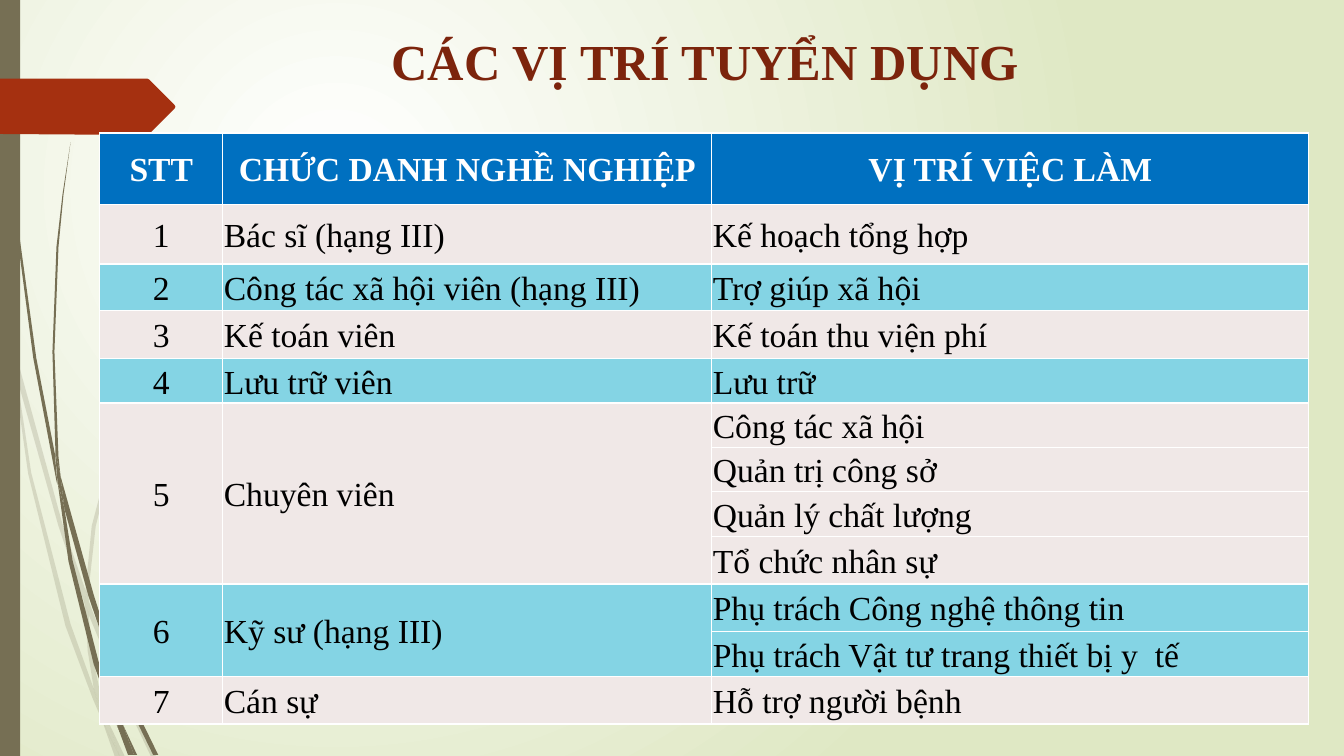
from lxml.etree import SubElement
from pptx import Presentation
from pptx.dml.color import RGBColor
from pptx.enum.shapes import MSO_SHAPE
from pptx.enum.text import MSO_ANCHOR, PP_ALIGN
from pptx.oxml import parse_xml
from pptx.oxml.ns import nsdecls, qn
from pptx.util import Inches, Pt

FONT = "Times New Roman"
WHITE = RGBColor(0xFF, 0xFF, 0xFF)
BLACK = RGBColor(0x00, 0x00, 0x00)
PALE_GREEN = RGBColor(0xDF, 0xE8, 0xC4)
OLIVE = RGBColor(0x76, 0x6F, 0x54)
RUST = RGBColor(0xA5, 0x30, 0x10)
TITLE_RED = RGBColor(0x7C, 0x24, 0x0C)
HEADER_BLUE = RGBColor(0x00, 0x70, 0xC0)
BANDS = [RGBColor(0xF0, 0xE8, 0xE7), RGBColor(0x84, 0xD4, 0xE4)]

# Outlines of the grass blades, in inches from the corner of their region
PALE_BLADES = [
    [(0.11, 3.5), (0.09, 3.22), (0, 2.82), (0, 2.99), (0.1, 3.44)],
    [(0.58, 5.22), (0.84, 5.99), (0.85, 5.86), (0.62, 5.2), (0.14, 3.45), (0.17, 3.76)],
    [(0.92, 6.07), (0.88, 5.96), (0.88, 6.1), (1.23, 6.94), (1.5, 7.51), (1.55, 7.51),
     (1.27, 6.92)],
    [(1.19, 7.51), (1.24, 7.51), (1.05, 7.11)],
    [(0.93, 6.83), (0.7, 6.19), (0.31, 4.69), (0.17, 3.76), (0.11, 3.5), (0.28, 4.7),
     (0.65, 6.21), (0.92, 6.93), (1.01, 7.14), (0.99, 7.07)],
    [(0.84, 5.99), (0.87, 6.46), (0.93, 6.83), (0.96, 6.92), (1.05, 7.11), (1.03, 7.06),
     (0.91, 6.46), (0.88, 6.1), (0.88, 6.08)],
    [(0.88, 5.84), (0.95, 5.22), (1.1, 4.62), (1.32, 4.05), (1.6, 3.49), (1.92, 2.95),
     (2.29, 2.45), (2.68, 1.98), (2.9, 1.75), (3.12, 1.54), (3.12, 1.53), (2.89, 1.75),
     (2.68, 1.97), (2.28, 2.44), (1.9, 2.95), (1.58, 3.48), (1.29, 4.03), (1.07, 4.61),
     (0.91, 5.22), (0.85, 5.84), (0.85, 5.86), (0.88, 5.96)],
    [(1.01, 7.14), (1.14, 7.51), (1.19, 7.51)],
    [(0.88, 6.08), (0.88, 6.1), (0.88, 5.96), (0.85, 5.86), (0.84, 5.99)],
    [(0.96, 6.92), (0.93, 6.83), (0.99, 7.07), (1.01, 7.14), (1.19, 7.51), (1.05, 7.11)],
]
DARK_BLADES = [
    [(0.07, 1.1), (0.17, 2.33), (0.33, 3.55), (0.56, 4.77), (0.57, 4.81), (0.55, 4.57),
     (0.55, 4.53), (0.36, 3.55), (0.19, 2.32), (0.08, 1.09), (0.05, 0.48), (0.04, 0),
     (0.03, 0), (0.04, 0.48)],
    [(0.88, 5.92), (1.06, 6.45), (1.06, 6.33), (1.06, 6.31), (0.93, 5.9), (0.6, 4.72),
     (0.64, 5.05)],
    [(1.13, 6.49), (1.1, 6.41), (1.11, 6.56), (1.32, 7.08), (1.52, 7.49), (1.57, 7.49),
     (1.36, 7.06)],
    [(1.1, 6.91), (0.98, 6.57), (0.72, 5.56), (0.64, 5.05), (0.57, 4.77), (0.68, 5.57),
     (0.93, 6.59), (1.11, 7.08), (1.17, 7.22), (1.16, 7.17)],
    [(0.6, 4.72), (0.58, 4.53), (0.54, 3.49), (0.58, 2.45), (0.63, 1.93), (0.7, 1.41),
     (0.62, 1.93), (0.56, 2.45), (0.52, 3.49), (0.55, 4.49)],
    [(1.33, 7.49), (1.36, 7.49), (1.22, 7.19)],
    [(0.57, 4.77), (0.64, 5.05), (0.6, 4.72), (0.55, 4.49), (0.55, 4.53)],
    [(1.11, 6.33), (1.15, 5.92), (1.25, 5.52), (1.4, 5.13), (1.58, 4.76), (1.8, 4.4),
     (2.05, 4.06), (2.31, 3.74), (2.45, 3.59), (2.61, 3.44), (2.45, 3.58), (2.31, 3.73),
     (2.04, 4.05), (1.78, 4.38), (1.56, 4.74), (1.37, 5.12), (1.22, 5.51), (1.11, 5.91),
     (1.06, 6.31), (1.1, 6.41)],
    [(1.17, 7.22), (1.27, 7.49), (1.31, 7.49)],
    [(1.06, 6.45), (1.1, 6.91), (1.16, 7.06), (1.22, 7.19), (1.21, 7.16), (1.11, 6.56),
     (1.09, 6.51)],
    [(1.06, 6.45), (1.09, 6.51), (1.11, 6.56), (1.1, 6.41), (1.06, 6.31), (1.06, 6.33)],
    [(1.16, 7.06), (1.1, 6.91), (1.16, 7.17), (1.17, 7.22), (1.3, 7.49), (1.33, 7.49),
     (1.22, 7.19)],
]
ARROW = [(0, 0), (1.46, 0), (1.48, 0.01), (1.73, 0.26), (1.74, 0.28), (1.73, 0.3),
         (1.48, 0.55), (1.46, 0.56), (0, 0.55)]

HEADINGS = ["STT", "CHỨC DANH NGHỀ NGHIỆP", "VỊ TRÍ VIỆC LÀM"]
JOBS = [
    ("Bác sĩ (hạng III)", ["Kế hoạch tổng hợp"]),
    ("Công tác xã hội viên (hạng III)", ["Trợ giúp xã hội"]),
    ("Kế toán viên", ["Kế toán thu viện phí"]),
    ("Lưu trữ viên", ["Lưu trữ"]),
    ("Chuyên viên", ["Công tác xã hội", "Quản trị công sở", "Quản lý chất lượng",
                     "Tổ chức nhân sự"]),
    ("Kỹ sư (hạng III)", ["Phụ trách Công nghệ thông tin",
                          "Phụ trách Vật tư trang thiết bị y  tế"]),
    ("Cán sự", ["Hỗ trợ người bệnh"]),
]
COLUMN_WIDTHS = [1.22, 4.85, 5.92]
ROW_HEIGHTS = [0.71, 0.59, 0.46, 0.48, 0.42, 0.42, 0.42, 0.45, 0.47, 0.47, 0.45, 0.47]


def paint(shape, color, opacity=100):
    shape.shadow.inherit = False
    shape.fill.solid()
    shape.fill.fore_color.rgb = color
    shape.line.fill.background()
    if opacity < 100:
        color_element = shape.element.spPr.find(qn("a:solidFill"))[0]
        SubElement(color_element, qn("a:alpha"), val=str(opacity * 1000))


def add_outline(slide, left, top, points, color, opacity=100):
    corners = [(Inches(left + x), Inches(top + y)) for x, y in points]
    builder = slide.shapes.build_freeform(*corners[0])
    builder.add_line_segments(corners[1:], close=True)
    paint(builder.convert_to_shape(), color, opacity)


def add_text(paragraph, text, size, color, bold, alignment):
    paragraph.alignment = alignment
    run = paragraph.add_run()
    run.text = text
    run.font.name = FONT
    run.font.size = Pt(size)
    run.font.bold = bold
    run.font.color.rgb = color


def add_background(slide):
    fill = slide.background.fill
    fill.gradient()
    for stop, color, position in zip(fill.gradient_stops, (WHITE, PALE_GREEN), (0, 1)):
        stop.color.rgb = color
        stop.position = position
    gradient = slide.element.find(".//" + qn("a:gradFill"))
    gradient.remove(gradient.find(qn("a:lin")))
    gradient.append(parse_xml(
        f'<a:path {nsdecls("a")} path="circle">'
        '<a:fillToRect l="50000" t="50000" r="100000" b="100000"/></a:path>'))


def add_side_decoration(slide, left, top, height):
    for blade in PALE_BLADES:
        add_outline(slide, left, top, blade, OLIVE, 20)
    for blade in DARK_BLADES:
        add_outline(slide, left, top, blade, OLIVE)
    bar = slide.shapes.add_shape(MSO_SHAPE.RECTANGLE, Inches(left), Inches(top),
                                 Inches(0.2), Inches(height))
    paint(bar, OLIVE)
    add_outline(slide, left, top + 0.78, ARROW, RUST)


def add_title(slide, left, top, width, height):
    box = slide.shapes.add_textbox(Inches(left), Inches(top), Inches(width), Inches(height))
    frame = box.text_frame
    frame.word_wrap = True
    frame.margin_top = Inches(0.11)
    add_text(frame.paragraphs[0], "CÁC VỊ TRÍ TUYỂN DỤNG", 36, TITLE_RED, True,
             PP_ALIGN.CENTER)


def format_cell(cell, color):
    cell.fill.solid()
    cell.fill.fore_color.rgb = color
    cell.vertical_anchor = MSO_ANCHOR.MIDDLE
    cell.margin_left = cell.margin_right = cell.margin_top = Inches(0.01)
    cell.margin_bottom = 0
    properties = cell._tc.get_or_add_tcPr()
    for index, side in enumerate(("lnL", "lnR", "lnT", "lnB")):
        properties.insert(index, parse_xml(
            f'<a:{side} {nsdecls("a")} w="12700"><a:solidFill>'
            f'<a:srgbClr val="{WHITE}"/></a:solidFill></a:{side}>'))


def write_cell(cell, text, color, bold, alignment):
    paragraph = cell.text_frame.paragraphs[0]
    paragraph.line_spacing = 1.07
    paragraph.space_after = Pt(8)
    add_text(paragraph, text, 24, color, bold, alignment)


def add_job_table(slide, left, top, width, height):
    table = slide.shapes.add_table(len(ROW_HEIGHTS), len(COLUMN_WIDTHS), Inches(left),
                                   Inches(top), Inches(width), Inches(height)).table
    table.horz_banding = False
    for column, column_width in zip(table.columns, COLUMN_WIDTHS):
        column.width = Inches(column_width)
    for row, row_height in zip(table.rows, ROW_HEIGHTS):
        row.height = Inches(row_height)

    # Heading row
    for cell, heading in zip(table.rows[0].cells, HEADINGS):
        format_cell(cell, HEADER_BLUE)
        write_cell(cell, heading, WHITE, True, PP_ALIGN.CENTER)

    # One band for each job title, with a row for each position
    first = 1
    for number, (job, positions) in enumerate(JOBS, start=1):
        last = first + len(positions) - 1
        for row, position in enumerate(positions, start=first):
            for column in range(len(COLUMN_WIDTHS)):
                format_cell(table.cell(row, column), BANDS[(number - 1) % 2])
            write_cell(table.cell(row, 2), position, BLACK, False, PP_ALIGN.LEFT)
        if last > first:
            for column in (0, 1):
                table.cell(first, column).merge(table.cell(last, column))
        write_cell(table.cell(first, 0), str(number), BLACK, False, PP_ALIGN.CENTER)
        write_cell(table.cell(first, 1), job, BLACK, False, PP_ALIGN.LEFT)
        first = last + 1


def main():
    presentation = Presentation()
    presentation.slide_width = Inches(13.33)
    presentation.slide_height = Inches(7.5)
    slide = presentation.slides.add_slide(presentation.slide_layouts[6])
    add_background(slide)
    add_side_decoration(slide, 0, 0, 7.5)
    add_title(slide, 2.12, 0.19, 9.75, 1.4)
    add_job_table(slide, 0.99, 1.32, 12, 5.81)
    presentation.save("out.pptx")


if __name__ == "__main__":
    main()
